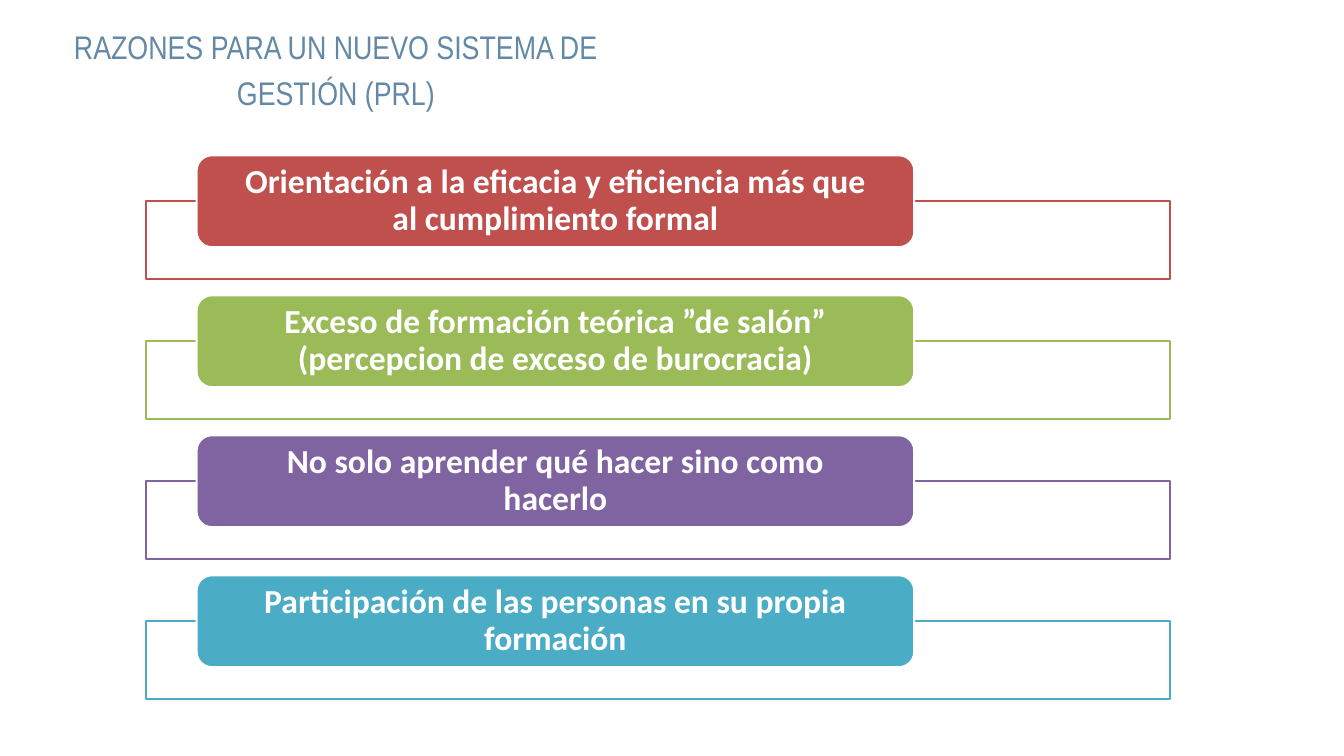
from lxml import etree
from pptx import Presentation
from pptx.dml.color import RGBColor
from pptx.enum.shapes import MSO_SHAPE
from pptx.enum.text import MSO_ANCHOR, PP_ALIGN
from pptx.oxml.ns import qn
from pptx.util import Emu, Pt

RECTANGLE, ROUNDED = MSO_SHAPE.RECTANGLE, MSO_SHAPE.ROUNDED_RECTANGLE
TOP, MIDDLE, CENTER = MSO_ANCHOR.TOP, MSO_ANCHOR.MIDDLE, PP_ALIGN.CENTER

# Content
TITLE = "RAZONES PARA UN NUEVO SISTEMA DE GESTIÓN (PRL)"
REASONS = [
    ("Orientación a la eficacia y eficiencia más que al cumplimiento formal", "red"),
    ("Exceso de formación teórica ”de salón” (percepcion de exceso de burocracia)", "green"),
    ("No solo aprender qué hacer sino como hacerlo", "purple"),
    ("Participación de las personas en su propia formación", "teal"),
]
COLORS = {
    "title": "6389A6", "white": "FFFFFF", "red": "C0504D",
    "green": "9BBB59", "purple": "8064A2", "teal": "4BACC6",
}

# Layout in px, 96 to the inch
PAGE_WIDTH, PAGE_HEIGHT = 1920, 1080
TITLE_BOX = (48, 29, 864, 132)
FRAME_LEFT, FRAME_WIDTH, FRAME_HEIGHT = 208, 1464, 111
LABEL_LEFT, LABEL_WIDTH, LABEL_HEIGHT = 281, 1025, 131
FIRST_TOP, ROW_STEP, FRAME_DROP = 222, 200, 65
LABEL_INSET = 45


def px(value):
    return Emu(value * 9525)


def color(name):
    return RGBColor.from_string(COLORS[name])


def place(shape, left, top, width, height):
    shape.left, shape.top = px(left), px(top)
    shape.width, shape.height = px(width), px(height)


def write(shape, text, *, font, size, fill, bold=False, spacing=1.0, anchor=MIDDLE, inset=0):
    frame = shape.text_frame
    frame.word_wrap = True
    frame.vertical_anchor = anchor
    frame.margin_left = frame.margin_right = px(inset)
    frame.margin_top = frame.margin_bottom = 0
    para = frame.paragraphs[0]
    para.alignment = CENTER
    para.line_spacing = spacing
    span = para.add_run()
    span.text = text
    span.font.name, span.font.size, span.font.bold = font, Pt(size), bold
    span.font.color.rgb = color(fill)


def add_box(page, kind, bounds, *, fill, line, opacity=100):
    box = page.shapes.add_shape(kind, *map(px, bounds))
    box.shadow.inherit = False
    box.fill.solid()
    box.fill.fore_color.rgb = color(fill)
    box.line.color.rgb = color(line)
    box.line.width = Pt(2)
    if opacity < 100:
        shade = box.fill._xPr.find(qn("a:solidFill"))[0]
        etree.SubElement(shade, qn("a:alpha"), val=str(opacity * 1000))
    return box


def main():
    deck = Presentation()
    deck.slide_width, deck.slide_height = px(PAGE_WIDTH), px(PAGE_HEIGHT)
    page = deck.slides.add_slide(deck.slide_layouts.get_by_name("Title Only"))

    # Title
    title = page.shapes.title
    place(title, *TITLE_BOX)
    write(title, TITLE, font="Arial Narrow", size=35, fill="title",
          spacing=Pt(49), anchor=TOP)

    # Reasons: an outlined frame with a coloured label over its top edge
    for row, (reason, accent) in enumerate(REASONS):
        top = FIRST_TOP + row * ROW_STEP
        add_box(page, RECTANGLE, (FRAME_LEFT, top + FRAME_DROP, FRAME_WIDTH, FRAME_HEIGHT),
                fill="white", line=accent, opacity=90)
        label = add_box(page, ROUNDED, (LABEL_LEFT, top, LABEL_WIDTH, LABEL_HEIGHT),
                        fill=accent, line="white")
        write(label, reason, font="Calibri", size=36, fill="white", bold=True,
              spacing=0.9, inset=LABEL_INSET)

    deck.save("out.pptx")


if __name__ == "__main__":
    main()
